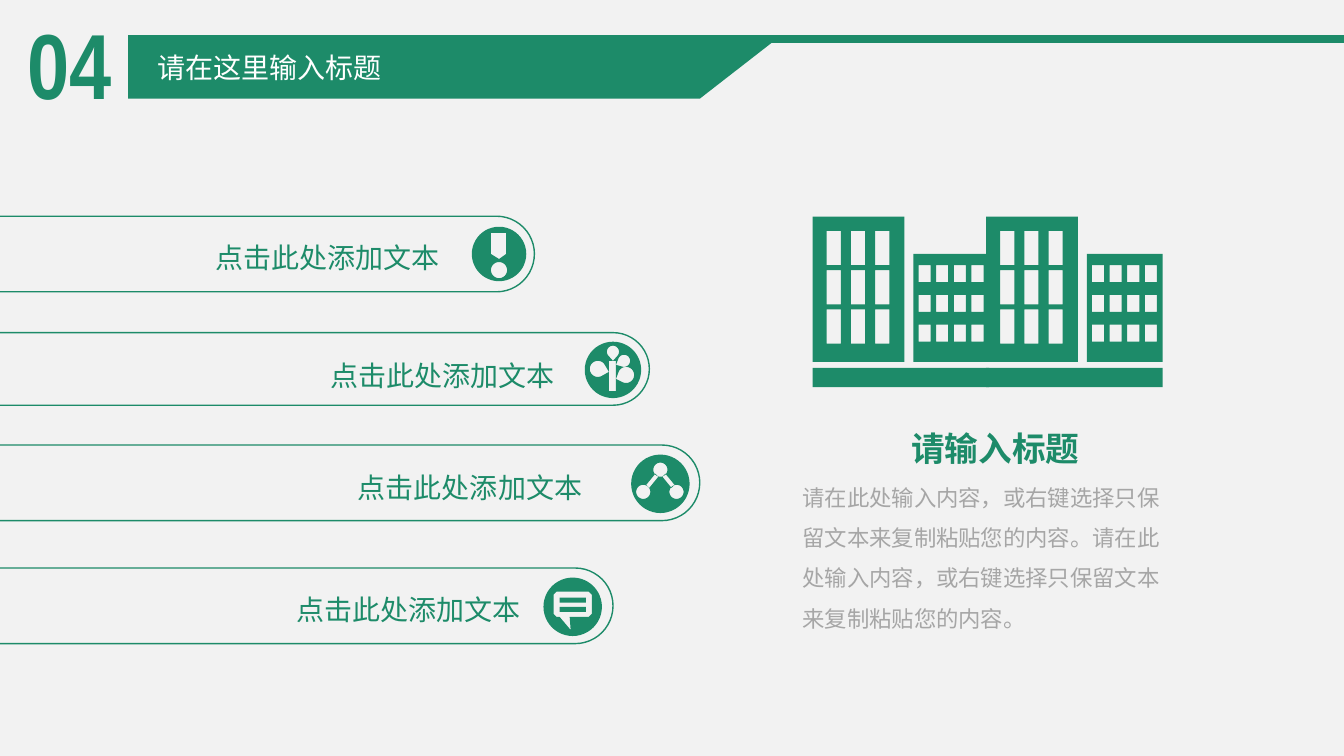
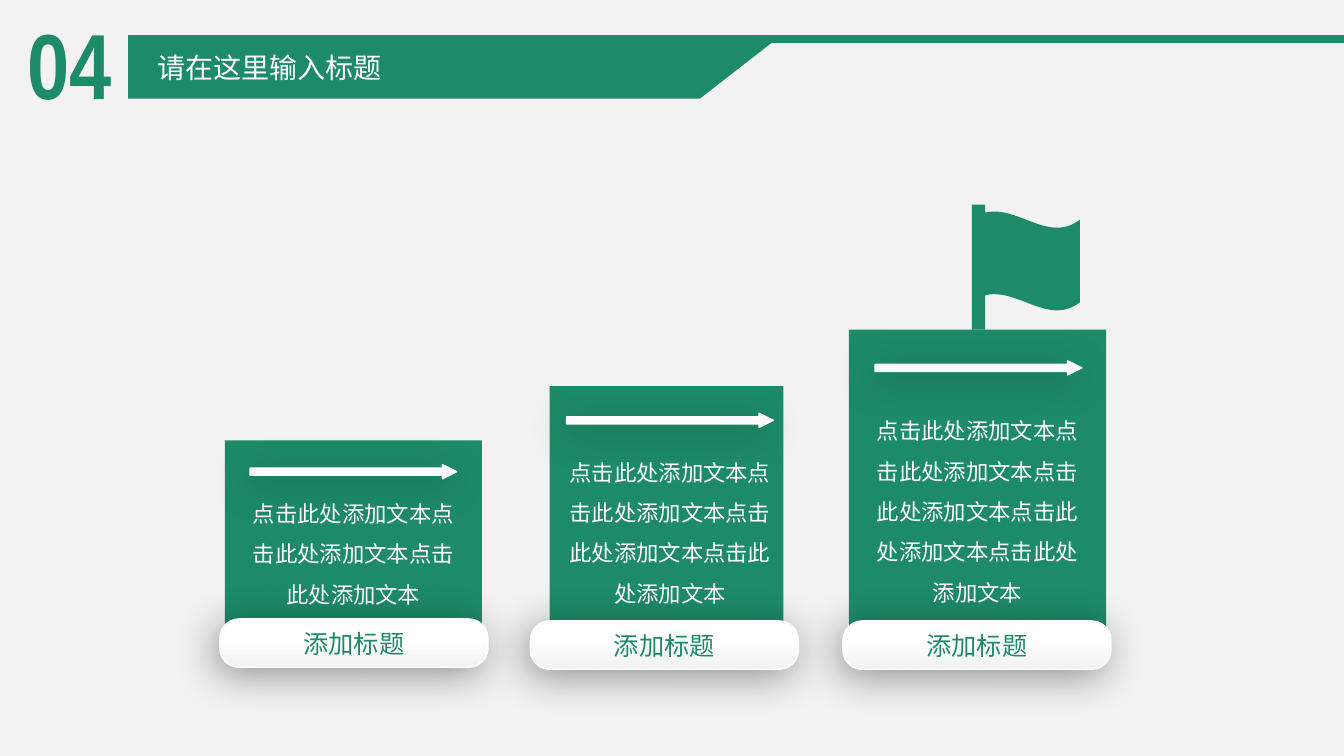
from math import acos, atan2, cos, hypot, pi, sin

from lxml.etree import SubElement
from pptx import Presentation
from pptx.dml.color import RGBColor
from pptx.enum.shapes import MSO_CONNECTOR, MSO_SHAPE
from pptx.enum.text import MSO_ANCHOR, MSO_AUTO_SIZE, PP_ALIGN
from pptx.oxml.ns import qn
from pptx.util import Inches, Pt

COLORS = {"green": "1D8B69", "background": "F2F2F2", "white": "FFFFFF",
          "gray": "A6A6A6", "shadow": "000000"}
CJK_FONT = "Noto Sans CJK SC"
SECTION = "04"
TITLE = "请在这里输入标题"
PHRASE = "点击此处添加文本"
BODY_TITLE = "请输入标题"
BODY = "请在此处输入内容，或右键选择只保留文本来复制粘贴您的内容。" * 2
LABEL = "添加标题"

BAND = [(1.27, 0.35), (7.75, 0.35), (6.94, 0.98), (1.27, 0.98)]
PILL_LEFT = -0.12
PILLS = [
    {"right": 5.3, "middle": 2.52, "height": 0.75, "text": (2.04, 2.27, 2.66, 0.5)},
    {"right": 6.44, "middle": 3.66, "height": 0.72, "text": (3.18, 3.44, 2.71, 0.5)},
    {"right": 6.94, "middle": 4.79, "height": 0.75, "text": (3.45, 4.55, 2.75, 0.5)},
    {"right": 6.08, "middle": 6.01, "height": 0.75, "text": (2.84, 5.76, 2.45, 0.5)},
]
STEPS = [
    {"block": (2.23, 4.37, 2.55, 1.97), "text": (2.38, 4.78, 2.25, 1.26),
     "repeats": 3, "label": (2.18, 6.14), "arrow": (2.48, 4.61)},
    {"block": (5.45, 3.83, 2.32, 2.53), "text": (5.52, 4.37, 2.25, 1.67),
     "repeats": 4, "label": (5.26, 6.16), "arrow": (5.62, 4.1)},
    {"block": (8.42, 3.27, 2.55, 3.1), "text": (8.57, 3.96, 2.25, 2.12),
     "repeats": 5, "label": (8.36, 6.16), "arrow": (8.68, 3.58)},
]
BUILDING_LEFTS = [8.06, 9.78]
FLAG_WAVE = [(9.77, 2.11), (10.09, 2.03), (10.4, 2.42), (10.71, 2.18)]
FLAG_DROP = 0.82


def color(name):
    return RGBColor.from_string(COLORS[name])


def box(left, top, width, height):
    right, bottom = left + width, top + height
    return [(left, top), (right, top), (right, bottom), (left, bottom)]


def disc(x, y, radius, tip=None):
    start, sweep, points = 0, 2 * pi, []
    if tip:
        distance = hypot(tip[0] - x, tip[1] - y)
        tangent = acos(min(1, radius / distance))
        start = atan2(tip[1] - y, tip[0] - x) + tangent
        sweep -= 2 * tangent
        points = [tip]
    steps = 48
    angles = [start + sweep * step / steps for step in range(steps + 1)]
    return points + [(x + radius * cos(a), y + radius * sin(a)) for a in angles]


def bezier(start, first, second, end, steps=30):
    def at(t):
        weights = ((1 - t) ** 3, 3 * t * (1 - t) ** 2, 3 * t * t * (1 - t), t ** 3)
        return tuple(sum(w * p[axis] for w, p in zip(weights, (start, first, second, end)))
                     for axis in (0, 1))
    return [at(step / steps) for step in range(steps + 1)]


def exclamation_icon():
    mark = [(4.87, 2.31), (4.87, 2.52), (4.95, 2.57), (5.02, 2.52), (5.02, 2.31)]
    return [disc(4.95, 2.52, 0.27), disc(4.95, 2.68, 0.08), mark]


def plant_icon():
    return [disc(6.08, 3.67, 0.28), box(6.04, 3.58, 0.07, 0.3),
            disc(6.08, 3.49, 0.06, (6.08, 3.58)), disc(6.19, 3.58, 0.06, (6.11, 3.62)),
            disc(5.93, 3.66, 0.08, (6.04, 3.69)), disc(6.21, 3.72, 0.08, (6.11, 3.76))]


def network_icon():
    link = [(6.5, 4.7), (6.41, 4.81), (6.44, 4.84), (6.53, 4.73)]
    mirrored = [(2 * 6.55 - x, y) for x, y in link]
    nodes = [disc(x, y, 0.07) for x, y in ((6.55, 4.66), (6.38, 4.88), (6.71, 4.88))]
    return [disc(6.55, 4.8, 0.29), link, mirrored] + nodes


def speech_icon():
    bubble = [(5.52, 5.87), (5.84, 5.87), (5.87, 5.9), (5.87, 6.09), (5.84, 6.12),
              (5.65, 6.12), (5.66, 6.25), (5.55, 6.12), (5.52, 6.12), (5.49, 6.09),
              (5.49, 5.9)]
    lines = [box(5.55, top, 0.26, 0.05) for top in (5.93, 6.02)]
    return [disc(5.68, 6.02, 0.29), bubble] + lines


def building(left):
    contours = [box(left, 3.65, 1.75, 0.19), box(left, 2.15, 0.91, 1.44),
                box(left + 1, 2.52, 0.75, 1.07)]
    for row in range(3):
        contours += [box(left + 0.14 + 0.24 * column, 2.29 + 0.39 * row, 0.14, 0.34)
                     for column in range(3)]
        contours += [box(left + 1.05 + 0.175 * column, 2.63 + 0.295 * row, 0.12, 0.17)
                     for column in range(4)]
    return contours


def flag():
    wave = bezier(*FLAG_WAVE)
    lower = [(x, y + FLAG_DROP) for x, y in reversed(wave)]
    return [[(9.64, 2.03), (9.77, 2.03)] + wave + lower + [(9.77, 3.27), (9.64, 3.27)]]


def add_outline(slide, contours):
    builder = None
    for contour in contours:
        points = [(Inches(x), Inches(y)) for x, y in contour]
        if builder is None:
            builder = slide.shapes.build_freeform(*points[0], scale=1.0)
        else:
            builder.move_to(*points[0])
        builder.add_line_segments(points[1:], close=True)
    return paint(builder.convert_to_shape())


def paint(shape):
    shape.shadow.inherit = False
    shape.fill.solid()
    shape.fill.fore_color.rgb = color("green")
    shape.line.fill.background()
    return shape


def add_preset(slide, preset, area):
    return slide.shapes.add_shape(preset, *map(Inches, area))


def write(frame, text, size, color_name, font="Arial", bold=False,
          align=PP_ALIGN.LEFT, spacing=1.0, anchor=MSO_ANCHOR.TOP):
    frame.word_wrap = True
    frame.auto_size = MSO_AUTO_SIZE.NONE
    frame.vertical_anchor = anchor
    paragraph = frame.paragraphs[0]
    paragraph.alignment = align
    paragraph.line_spacing = spacing
    run = paragraph.add_run()
    run.text = text
    run.font.size = Pt(size)
    run.font.bold = bold
    run.font.color.rgb = color(color_name)
    run.font.name = font
    SubElement(run._r.get_or_add_rPr(), qn("a:ea"), typeface=CJK_FONT)


def add_text(slide, area, text, size, color_name, **style):
    text_box = slide.shapes.add_textbox(*map(Inches, area))
    write(text_box.text_frame, text, size, color_name, **style)


def add_raised(slide, preset, area, adjustments):
    shape = add_preset(slide, preset, area)
    for index, value in enumerate(adjustments):
        shape.adjustments[index] = value
    shape.fill.gradient()
    shape.fill.gradient_angle = 90
    stops = shape.fill.gradient_stops
    for stop, position, name in zip(stops, (0, 0.62), ("background", "white")):
        stop.position = position
        stop.color.rgb = color(name)
    shape.line.color.rgb = color("white")
    shape.line.width = Pt(1)
    shape.shadow.inherit = False
    effects = shape._element.spPr.find(qn("a:effectLst"))
    shadow = SubElement(effects, qn("a:outerShdw"), blurRad=str(Pt(30)), dist=str(Pt(6)),
                        dir=str(126 * 60000), algn="ctr", rotWithShape="0")
    shade = SubElement(shadow, qn("a:srgbClr"), val=COLORS["shadow"])
    SubElement(shade, qn("a:alpha"), val="40000")
    return shape


def set_up_layout(presentation, layout, slide):
    background = presentation.slide_master.background.fill
    background.solid()
    background.fore_color.rgb = color("background")
    for placeholder in list(layout.placeholders):
        if placeholder.placeholder_format.idx:
            layout.shapes.element.remove(placeholder._element)
    band = add_outline(slide, [BAND])
    rule = slide.shapes.add_connector(MSO_CONNECTOR.STRAIGHT, Inches(6.78), Inches(0.39),
                                      presentation.slide_width, Inches(0.39))
    rule.line.color.rgb = color("green")
    rule.line.width = Pt(6)
    SubElement(rule._element.spPr, qn("a:effectLst"))
    for shape in (band, rule):
        layout.shapes.element.insert(2, shape._element)


def add_heading(slide):
    title = slide.shapes.title
    title.left, title.top, title.width, title.height = map(Inches, (1.46, 0.45, 3.34, 0.44))
    write(title.text_frame, TITLE, 20, "white", font=CJK_FONT)
    add_text(slide, (0.17, 0.02, 1.59, 1.21), SECTION, 66, "green",
             font="Arial Narrow", bold=True)


def build_list_slide(slide):
    for contours in (exclamation_icon(), plant_icon(), network_icon(), speech_icon()):
        add_outline(slide, contours)
    for pill in PILLS:
        length, height = pill["right"] - PILL_LEFT, pill["height"]
        center = PILL_LEFT + length / 2
        shape = add_preset(slide, MSO_SHAPE.ROUND_2_SAME_RECTANGLE,
                           (center - height / 2, pill["middle"] - length / 2, height, length))
        shape.rotation = 90
        shape.adjustments[0] = 0.5
        shape.adjustments[1] = 0
        shape.shadow.inherit = False
        shape.fill.background()
        shape.line.color.rgb = color("green")
        shape.line.width = Pt(1)
        add_text(slide, pill["text"], PHRASE, 20, "green", spacing=1.2)
    for left in BUILDING_LEFTS:
        add_outline(slide, building(left))
    add_text(slide, (7.86, 4.62, 3.91, 2.07), BODY, 16, "gray", font=CJK_FONT, spacing=1.5)
    add_text(slide, (8.94, 4, 2.79, 0.71), BODY_TITLE, 24, "green",
             font=CJK_FONT, bold=True, spacing=1.5)


def build_steps_slide(slide):
    add_outline(slide, flag())
    for step in STEPS:
        paint(add_preset(slide, MSO_SHAPE.RECTANGLE, step["block"]))
        add_text(slide, step["text"], PHRASE * step["repeats"], 16, "white",
                 align=PP_ALIGN.CENTER, spacing=1.5)
        label = add_raised(slide, MSO_SHAPE.ROUNDED_RECTANGLE,
                           (*step["label"], 2.66, 0.48), [0.4])
        write(label.text_frame, LABEL, 18, "green", align=PP_ALIGN.CENTER,
              anchor=MSO_ANCHOR.MIDDLE)
        add_raised(slide, MSO_SHAPE.RIGHT_ARROW, (*step["arrow"], 2.05, 0.14), [0.5, 1.01])


def main():
    presentation = Presentation()
    presentation.slide_width = Inches(13.33)
    presentation.slide_height = Inches(7.5)
    layout = presentation.slide_layouts.get_by_name("Title Only")
    slides = [presentation.slides.add_slide(layout) for _ in range(2)]
    set_up_layout(presentation, layout, slides[0])
    for slide, build in zip(slides, (build_list_slide, build_steps_slide)):
        build(slide)
        add_heading(slide)
    presentation.save("out.pptx")


if __name__ == "__main__":
    main()
